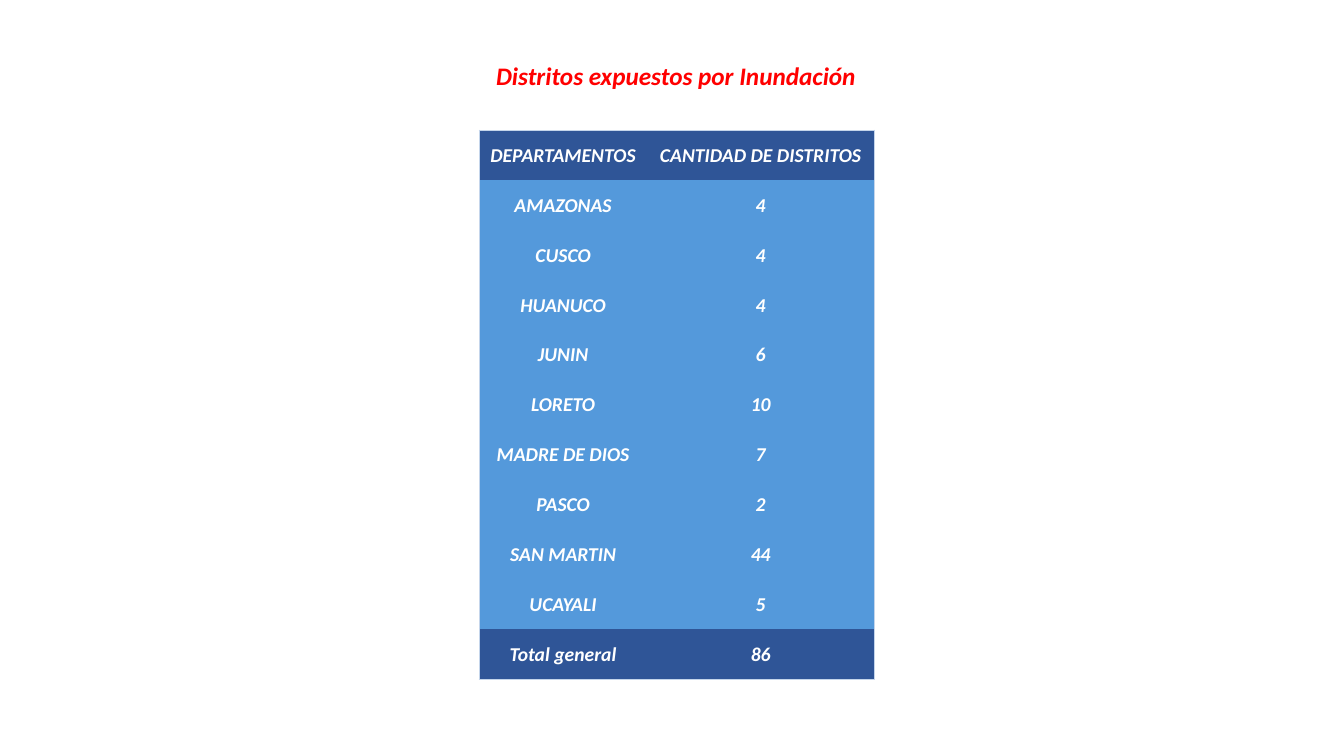
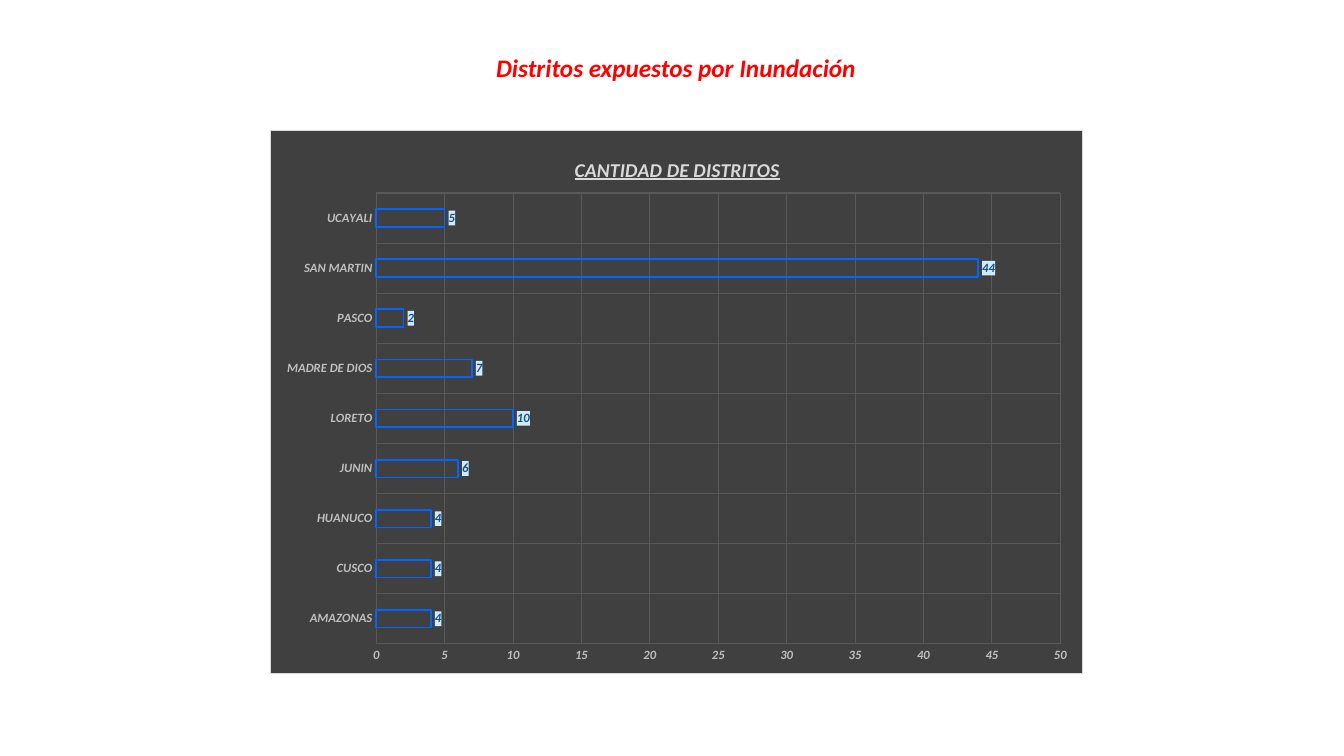
import pptx
import pptx.chart.data
import pptx.dml.color
import pptx.enum.chart
import pptx.enum.text
import pptx.oxml
import pptx.oxml.ns
import pptx.util

Inches, Pt = pptx.util.Inches, pptx.util.Pt
qn = pptx.oxml.ns.qn
CENTER = pptx.enum.text.PP_ALIGN.CENTER
MIDDLE = pptx.enum.text.MSO_ANCHOR.MIDDLE

# Content
TITLE = "Distritos expuestos por Inundación"
HEADERS = ("DEPARTAMENTOS", "CANTIDAD DE DISTRITOS")
DISTRICTS = {
    "AMAZONAS": 4, "CUSCO": 4, "HUANUCO": 4, "JUNIN": 6, "LORETO": 10,
    "MADRE DE DIOS": 7, "PASCO": 2, "SAN MARTIN": 44, "UCAYALI": 5,
}
TOTAL_LABEL = "Total general"

# Shared style
COLORS = {
    "title": "FF0000", "white": "FFFFFF", "band": "2F5597", "body": "5499DB",
    "table_border": "C4D5EB", "chart": "404040", "chart_border": "D9D9D9",
    "grid": "595959", "axis": "BFBFBF", "bar": "0066FF",
    "label": "1F4E79", "label_fill": "CCECFF",
}
FONT = {"name": "Calibri", "bold": True, "italic": True}
NO_STYLE_NO_GRID = "{2D5ABB26-0587-4C30-8999-92F81FD0307C}"
NAMESPACES = pptx.oxml.ns.nsdecls("a", "c")


def rgb(color):
    return pptx.dml.color.RGBColor.from_string(COLORS[color])


def set_attributes(target, values):
    for name, value in values.items():
        setattr(target, name, value)


def format_font(font, size, color, **extra):
    set_attributes(font, {**FONT, "size": Pt(size), **extra})
    font.color.rgb = rgb(color)


def solid_fill(color):
    return f'<a:solidFill><a:srgbClr val="{COLORS[color]}"/></a:solidFill>'


def chart_fill(color, border=None):
    line = f'<a:ln w="9525">{solid_fill(border)}</a:ln>' if border else ""
    return pptx.oxml.parse_xml(
        f"<c:spPr {NAMESPACES}>{solid_fill(color)}{line}</c:spPr>")


def set_layout(parent, inner=False, **fractions):
    """Place a chart part by fractions of the chart's size."""
    for old in parent.findall(qn("c:layout")):
        parent.remove(old)
    target = '<c:layoutTarget val="inner"/>' if inner else ""
    modes = "".join(f'<c:{key}Mode val="edge"/>' for key in ("x", "y"))
    values = "".join(f'<c:{key} val="{value}"/>' for key, value in fractions.items())
    layout = pptx.oxml.parse_xml(
        f"<c:layout {NAMESPACES}><c:manualLayout>{target}{modes}{values}"
        "</c:manualLayout></c:layout>")
    text = parent.find(qn("c:tx"))
    parent.insert(0 if text is None else 1, layout)


def add_titled_slide(presentation, top):
    slide = presentation.slides.add_slide(presentation.slide_layouts[5])
    title = slide.shapes.title
    set_attributes(title, {"left": Inches(4.8), "top": Inches(top),
                           "width": Inches(3.81), "height": Inches(0.4)})
    frame = title.text_frame
    frame.text = TITLE
    set_attributes(frame, {"word_wrap": False, "vertical_anchor": MIDDLE,
                           "auto_size": pptx.enum.text.MSO_AUTO_SIZE.NONE})
    paragraph = frame.paragraphs[0]
    paragraph.alignment = CENTER
    format_font(paragraph.runs[0].font, 18, "title")
    return slide


def add_borders(cell, sides):
    properties = cell._tc.get_or_add_tcPr()
    for index, side in enumerate(sides):
        properties.insert(index, pptx.oxml.parse_xml(
            f'<a:ln{side} {NAMESPACES} w="6350">'
            f'{solid_fill("table_border")}</a:ln{side}>'))


def add_district_table(slide):
    rows = [HEADERS, *DISTRICTS.items(), (TOTAL_LABEL, sum(DISTRICTS.values()))]
    last = len(rows) - 1
    frame = slide.shapes.add_table(len(rows), 2, Inches(4.75), Inches(1.29),
                                   Inches(3.92), Inches(5.45))
    table = frame.table
    set_attributes(table, {"first_row": False, "horz_banding": False})
    table._tbl.tblPr.find(qn("a:tableStyleId")).text = NO_STYLE_NO_GRID
    for column, width in zip(table.columns, (1.67, 2.25)):
        column.width = Inches(width)
    for row_index, row in enumerate(rows):
        for column_index, value in enumerate(row):
            cell = table.cell(row_index, column_index)
            cell.text = str(value)
            margin = Inches(0.01)
            set_attributes(cell, {"vertical_anchor": MIDDLE, "margin_left": margin,
                                  "margin_right": margin, "margin_top": margin,
                                  "margin_bottom": 0})
            cell.fill.solid()
            cell.fill.fore_color.rgb = rgb("band" if row_index in (0, last) else "body")
            paragraph = cell.text_frame.paragraphs[0]
            paragraph.alignment = CENTER
            format_font(paragraph.runs[0].font, 14, "white")
            # Only the outer edges carry a line
            sides = ["LR"[column_index]]
            sides += ["T"] * (row_index == 0) + ["B"] * (row_index == last)
            add_borders(cell, sides)


def add_district_chart(slide):
    data = pptx.chart.data.CategoryChartData(number_format="#,##0")
    data.categories = list(DISTRICTS)
    data.add_series(HEADERS[1], list(DISTRICTS.values()))
    chart = slide.shapes.add_chart(
        pptx.enum.chart.XL_CHART_TYPE.BAR_CLUSTERED, Inches(2.68), Inches(1.29),
        Inches(8.06), Inches(5.4), data).chart
    format_font(chart.font, 10, "axis")
    chart.has_legend = False
    space = chart._chartSpace
    space.find(qn("c:chart")).addnext(chart_fill("chart", "chart_border"))

    # Chart title
    chart.has_title = True
    title_frame = chart.chart_title.text_frame
    title_frame.text = HEADERS[1]
    format_font(title_frame.paragraphs[0].runs[0].font, 14, "chart_border",
                underline=True)
    set_layout(space.find(".//" + qn("c:title")), x=0.37, y=0.04)
    set_layout(space.find(".//" + qn("c:plotArea")), inner=True,
               x=0.13, y=0.115, w=0.843, h=0.83)

    # Axes
    set_attributes(chart.value_axis, {"minimum_scale": 0, "maximum_scale": 50,
                                      "major_unit": 5})
    for axis in (chart.category_axis, chart.value_axis):
        set_attributes(axis, {
            "has_major_gridlines": True,
            "major_tick_mark": pptx.enum.chart.XL_TICK_MARK.NONE})
        axis.format.line.fill.background()
        grid_line = axis.major_gridlines.format.line
        grid_line.width = Pt(0.75)
        grid_line.color.rgb = rgb("grid")
        format_font(axis.tick_labels.font, 9, "axis")

    # Outlined bars with value labels
    plot = chart.plots[0]
    set_attributes(plot, {"gap_width": 182, "overlap": -50,
                          "vary_by_categories": False})
    series = plot.series[0]
    series.invert_if_negative = False
    series.format.fill.background()
    series.format.line.width = Pt(1.25)
    series.format.line.color.rgb = rgb("bar")
    labels = series.data_labels
    set_attributes(labels, {
        "show_value": True, "number_format": "#,##0",
        "number_format_is_linked": False,
        "position": pptx.enum.chart.XL_LABEL_POSITION.OUTSIDE_END})
    format_font(labels.font, 9, "label")
    labels._element.find(qn("c:numFmt")).addnext(chart_fill("label_fill"))


def main():
    presentation = pptx.Presentation()
    set_attributes(presentation, {"slide_width": Inches(13.33),
                                  "slide_height": Inches(7.5)})
    add_district_table(add_titled_slide(presentation, 0.55))
    add_district_chart(add_titled_slide(presentation, 0.47))
    presentation.save("out.pptx")


if __name__ == "__main__":
    main()
